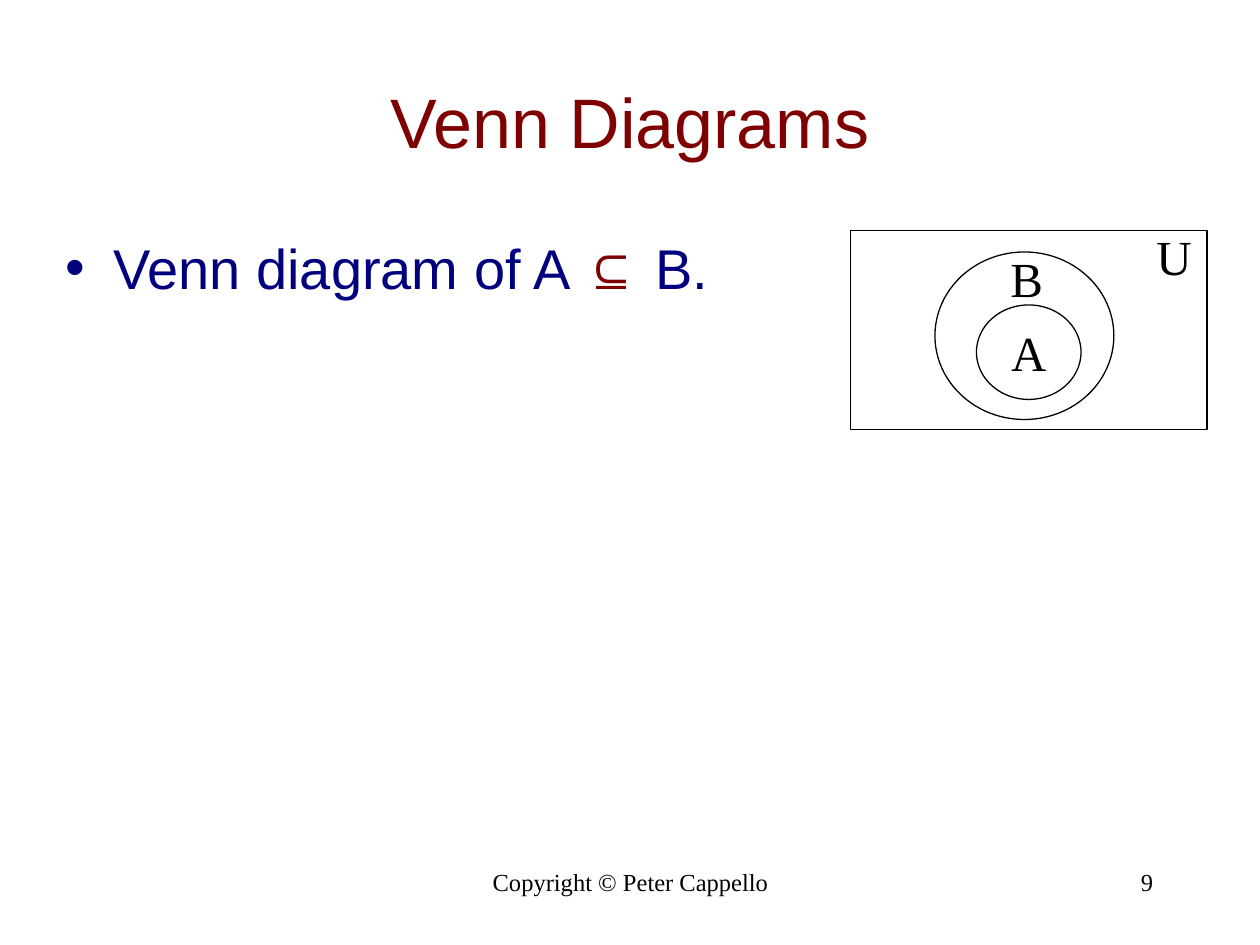
from dataclasses import dataclass

from lxml import etree
from pptx import Presentation, util as u
from pptx.dml.color import RGBColor
from pptx.enum import shapes, text
from pptx.oxml.ns import qn


@dataclass(frozen=True)
class Theme:
    sans: str = "Arial"
    serif: str = "Times New Roman"
    maroon: str = "7F0000"
    navy: str = "00007F"
    black: str = "000000"
    title: int = 40
    body: int = 32
    label: int = 28
    footer: int = 14
    outline: float = 0.75


THEME = Theme()
ALIGN = text.PP_ALIGN
ANCHOR = text.MSO_ANCHOR


def add_span(para, words, size, font, color, bold=False):
    span = para.add_run()
    span.text = words
    span.font.size = u.Pt(size)
    span.font.name = font
    span.font.bold = bold
    span.font.color.rgb = RGBColor.from_string(color)


def add_text_box(page, box, align=ALIGN.LEFT, anchor=ANCHOR.TOP, wrap=True):
    """Add an empty text box and return its first paragraph."""
    frame = page.shapes.add_textbox(*map(u.Inches, box)).text_frame
    frame.word_wrap = wrap
    frame.vertical_anchor = anchor
    para = frame.paragraphs[0]
    para.alignment = align
    return para


def add_outline(page, kind, box):
    shape = page.shapes.add_shape(kind, *map(u.Inches, box))
    shape.shadow.inherit = False
    shape.fill.background()
    shape.line.color.rgb = RGBColor.from_string(THEME.black)
    shape.line.width = u.Pt(THEME.outline)
    return shape


def add_title(page, box):
    para = add_text_box(page, box, ALIGN.CENTER, ANCHOR.MIDDLE)
    add_span(para, "Venn Diagrams", THEME.title, THEME.sans, THEME.maroon)


def add_body(page, box):
    para = add_text_box(page, box)
    para.line_spacing = 1.1
    para.space_before = u.Pt(0.2 * THEME.body)

    # Bullet with a hanging indent
    indent = u.Inches(0.38)
    props = para._p.get_or_add_pPr()
    props.set("marL", str(indent))
    props.set("indent", str(-indent))
    etree.SubElement(props, qn("a:buFont")).set("typeface", THEME.sans)
    etree.SubElement(props, qn("a:buChar")).set("char", "•")

    for words, color, bold in (
        ("Venn diagram of A ", THEME.navy, False),
        ("⊆", THEME.maroon, True),
        (" B.", THEME.navy, False),
    ):
        add_span(para, words, THEME.body, THEME.sans, color, bold)


def add_venn(page, box):
    left, top, width, height = box

    def label(para, words):
        add_span(para, words, THEME.label, THEME.serif, THEME.black)

    # Universe
    add_outline(page, shapes.MSO_SHAPE.RECTANGLE, box)
    label(add_text_box(page, (left + 2.33, top - 0.08, 0.48, 0.57), wrap=False), "U")

    # Subset A, labelled in its centre
    subset = add_outline(page, shapes.MSO_SHAPE.OVAL, (left + 1, top + 0.59, 0.83, 0.75))
    frame = subset.text_frame
    frame.word_wrap = False
    frame.vertical_anchor = ANCHOR.MIDDLE
    frame.paragraphs[0].alignment = ALIGN.CENTER
    label(frame.paragraphs[0], "A")

    # Superset B around it
    add_outline(page, shapes.MSO_SHAPE.OVAL, (left + 0.67, top + 0.17, 1.42, 1.33))
    label(add_text_box(page, (left + 1.17, top + 0.09, 0.46, 0.57), wrap=False), "B")


def add_footer(page, box):
    left, top, width, height = box
    for words, offset, part, align in (
        ("Copyright © Peter Cappello", 2.67, 3.17, ALIGN.CENTER),
        ("9", width - 2.08, 2.08, ALIGN.RIGHT),
    ):
        para = add_text_box(page, (left + offset, top, part, height), align)
        add_span(para, words, THEME.footer, THEME.serif, THEME.black)


def main():
    deck = Presentation()
    deck.slide_width, deck.slide_height = u.Inches(10), u.Inches(7.5)
    page = deck.slides.add_slide(deck.slide_layouts[6])
    add_footer(page, (0.75, 6.83, 8.5, 0.5))
    add_title(page, (0.75, 0.33, 8.5, 1.25))
    add_body(page, (0.42, 1.75, 6.33, 5.17))
    add_venn(page, (6.75, 1.83, 2.83, 1.58))
    deck.save("out.pptx")


if __name__ == "__main__":
    main()
